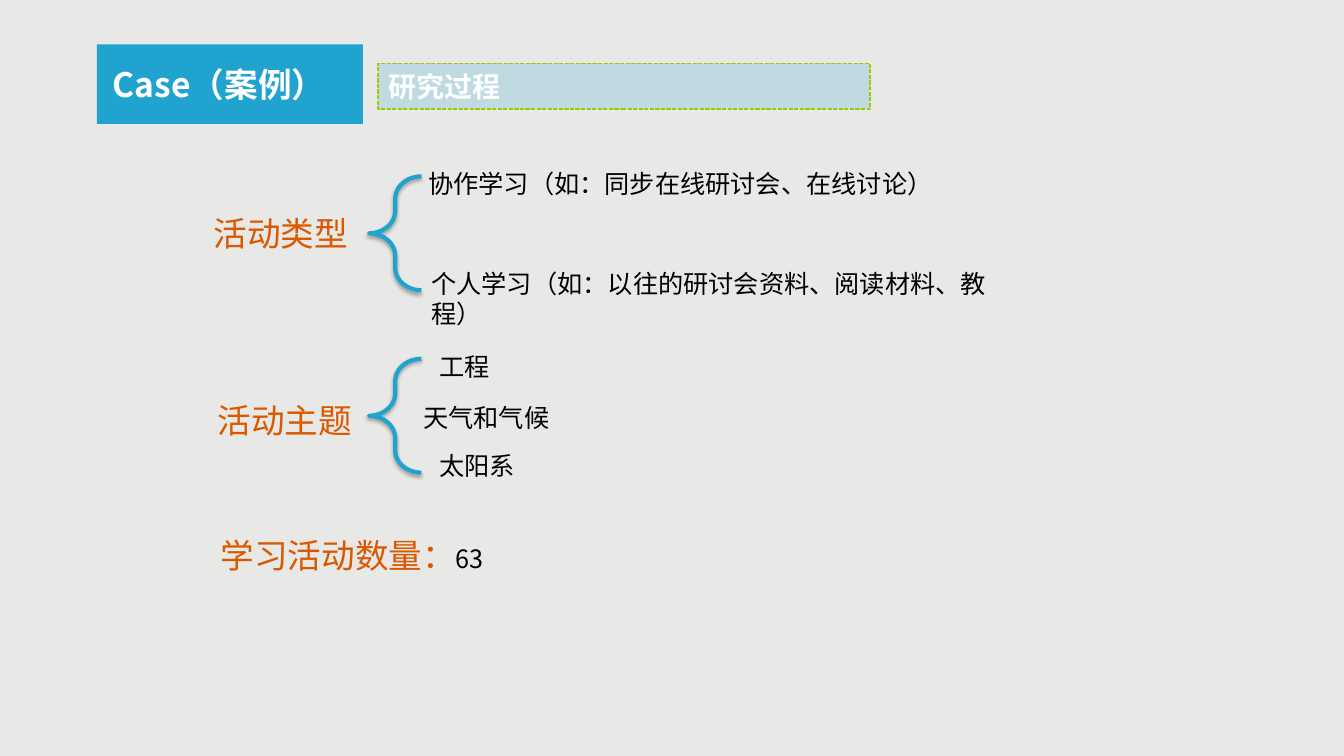
from typing import NamedTuple

from lxml import etree
from pptx import Presentation
from pptx.dml.color import RGBColor
from pptx.enum.dml import MSO_LINE
from pptx.enum.shapes import MSO_SHAPE
from pptx.enum.text import MSO_ANCHOR, PP_ALIGN
from pptx.oxml import parse_xml
from pptx.oxml.ns import nsdecls, qn
from pptx.util import Inches, Pt

RECT, BRACE = MSO_SHAPE.RECTANGLE, MSO_SHAPE.LEFT_BRACE
DASH = MSO_LINE.SQUARE_DOT
MIDDLE, LEFT = MSO_ANCHOR.MIDDLE, PP_ALIGN.LEFT
FONT = "Noto Sans CJK SC"
BLUE, ORANGE, GREEN = "21A3D0", "DA5800", "99CC00"
BLACK, WHITE, GREY = "000000", "FFFFFF", "E8E8E6"


class Label(NamedTuple):
    text: str
    left: float
    top: float
    width: float


HEADS = [
    Label("活动类型", 2.02, 2.06, 1.65),
    Label("活动主题", 2.06, 3.92, 3.07),
    Label("学习活动数量：", 2.09, 5.26, 4.86),
]
ITEMS = [
    Label("协作学习（如：同步在线研讨会、在线讨论）", 4.15, 1.62, 5.2),
    Label("个人学习（如：以往的研讨会资料、阅读材料、教程）", 4.18, 2.61, 5.95),
    Label("工程", 4.26, 3.44, 4.09),
    Label("天气和气候", 4.1, 3.94, 4.09),
    Label("太阳系", 4.26, 4.42, 4.09),
]
BRACE_TOPS = [1.75, 3.56]


def rgb(code: str) -> RGBColor:
    return RGBColor.from_string(code)


def paint(shape, code: str) -> None:
    shape.fill.solid()
    shape.fill.fore_color.rgb = rgb(code)


def style(run, size: float, code: str, bold: bool = False) -> None:
    font = run.font
    font.size, font.bold, font.name = Pt(size), bold, FONT
    font.color.rgb = rgb(code)
    etree.SubElement(font._element, qn("a:ea"), typeface=FONT)


def add_label(slide, label: Label, size: float, code: str, high: float):
    box = slide.shapes.add_textbox(
        Inches(label.left), Inches(label.top), Inches(label.width), Inches(high))
    frame = box.text_frame
    frame.word_wrap = True
    frame.text = label.text
    para = frame.paragraphs[0]
    style(para.runs[0], size, code)
    return para


def add_title(slide) -> None:
    title = slide.shapes.title
    title.left, title.top = Inches(0.96), Inches(0.44)
    title.width, title.height = Inches(2.64), Inches(0.79)
    paint(title, BLUE)
    frame = title.text_frame
    frame.text = "Case（案例）"
    frame.vertical_anchor = MIDDLE
    frame.margin_left, frame.margin_right = Inches(0.16), 0
    para = frame.paragraphs[0]
    para.alignment = LEFT
    style(para.runs[0], 24, WHITE, True)


def add_banner(slide) -> None:
    bar = slide.shapes.add_shape(
        RECT, Inches(3.75), Inches(0.63), Inches(4.88), Inches(0.45))
    bar.shadow.inherit = False
    paint(bar, BLUE)
    tint = bar.fill._xPr.find(qn("a:solidFill"))[0]
    etree.SubElement(tint, qn("a:alpha"), val="20000")
    bar.line.color.rgb = rgb(GREEN)
    bar.line.width, bar.line.dash_style = Pt(1), DASH
    frame = bar.text_frame
    frame.text = "研究过程"
    frame.word_wrap = False
    frame.vertical_anchor = MIDDLE
    para = frame.paragraphs[0]
    para.alignment = LEFT
    style(para.runs[0], 20, WHITE, True)


def add_brace(slide, top: float) -> None:
    brace = slide.shapes.add_shape(
        BRACE, Inches(3.66), Inches(top), Inches(0.52), Inches(1.13))
    brace.adjustments[0] = 0.428
    brace.fill.background()
    brace.line.color.rgb = rgb(BLUE)
    brace.line.width = Pt(3)
    brace.shadow.inherit = False
    effects = brace._element.spPr.find(qn("a:effectLst"))
    effects.append(parse_xml(
        f'<a:outerShdw {nsdecls("a")} blurRad="{Pt(3.1)}" dist="{Pt(1.8)}" '
        f'dir="5400000" rotWithShape="0"><a:srgbClr val="{BLACK}">'
        '<a:alpha val="35000"/></a:srgbClr></a:outerShdw>'))


def main() -> None:
    deck = Presentation()
    deck.slide_width, deck.slide_height = Inches(13.33), Inches(7.5)
    slide = deck.slides.add_slide(deck.slide_layouts.get_by_name("Title Only"))
    paint(slide.background, GREY)
    add_title(slide)
    add_banner(slide)
    for top in BRACE_TOPS:
        add_brace(slide, top)
    for item in ITEMS:
        add_label(slide, item, 18, BLACK, 0.4)
    heads = [add_label(slide, head, 24, ORANGE, 0.5) for head in HEADS]
    count = heads[-1].add_run()
    count.text = "63"
    style(count, 18, BLACK)
    deck.save("out.pptx")


if __name__ == "__main__":
    main()
